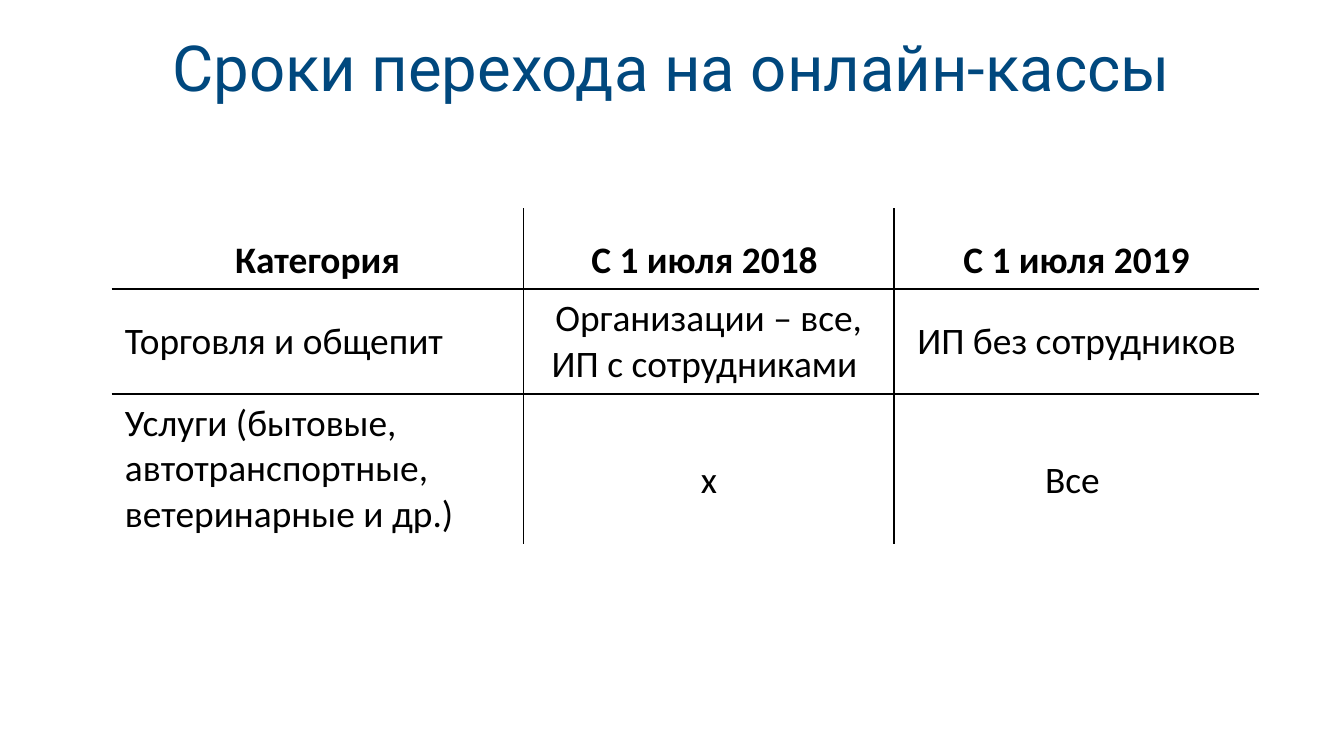
from dataclasses import dataclass

from lxml.etree import SubElement
from pptx import Presentation
from pptx.dml.color import RGBColor
from pptx.enum.text import MSO_ANCHOR, PP_ALIGN
from pptx.oxml.ns import qn
from pptx.util import Inches, Pt


@dataclass(frozen=True)
class Theme:
    heading: RGBColor = RGBColor(0x00, 0x48, 0x7E)
    ink: RGBColor = RGBColor(0, 0, 0)
    paper: RGBColor = RGBColor(0xFF, 0xFF, 0xFF)
    heading_font: str = "Roboto"
    body_font: str = "Calibri"
    heading_size: int = 34
    body_size: int = 20
    heading_leading: int = 35
    rule_width: int = 1


THEME = Theme()
SLIDE_WIDTH = 10
COLUMN_WIDTHS = (3.07, 2.76, 2.72)
ROW_HEIGHTS = (0.6, 0.78, 1.12)
DEADLINES = (
    ("Категория", "С 1 июля 2018 ", "С 1 июля 2019"),
    ("Торговля и общепит", "Организации – все,\nИП с сотрудниками ", "ИП без сотрудников"),
    ("Услуги (бытовые, автотранспортные, ветеринарные и др.)", "x", "Все "),
)
SINGLE_SPACED = {(1, 1), (2, 0)}


def style_font(font, name, size, color, bold=False):
    font.name = name
    font.size = Pt(size)
    font.color.rgb = color
    font.bold = bold


def add_heading(slide, left, top, width, height):
    heading = slide.shapes.add_textbox(Inches(left), Inches(top), Inches(width), Inches(height))
    frame = heading.text_frame
    frame.word_wrap = True
    frame.vertical_anchor = MSO_ANCHOR.MIDDLE
    frame.margin_left = frame.margin_right = frame.margin_top = frame.margin_bottom = 0
    frame.text = "Сроки перехода на онлайн-кассы"
    paragraph = frame.paragraphs[0]
    paragraph.alignment = PP_ALIGN.CENTER
    paragraph.line_spacing = Pt(THEME.heading_leading)
    style_font(paragraph.runs[0].font, THEME.heading_font, THEME.heading_size, THEME.heading)


def set_borders(cell, visible_sides):
    properties = cell._tc.get_or_add_tcPr()
    for index, side in enumerate("LRTB"):
        border = SubElement(properties, qn(f"a:ln{side}"), w=str(Pt(THEME.rule_width)))
        properties.insert(index, border)
        if side in visible_sides:
            fill = SubElement(border, qn("a:solidFill"))
            SubElement(fill, qn("a:srgbClr"), val=str(THEME.ink))
        else:
            SubElement(border, qn("a:noFill"))


def fill_cell(cell, row, column, text):
    is_header, is_category = row == 0, column == 0
    last_row, last_column = len(ROW_HEIGHTS) - 1, len(COLUMN_WIDTHS) - 1
    centred_vertically = is_header or (row == last_row and not is_category)
    cell.vertical_anchor = MSO_ANCHOR.MIDDLE if centred_vertically else MSO_ANCHOR.TOP
    if is_header or is_category:
        cell.fill.background()
    else:
        cell.fill.solid()
        cell.fill.fore_color.rgb = THEME.paper
    inner_edges = {"L": column > 0, "R": column < last_column, "T": row > 0, "B": row < last_row}
    set_borders(cell, [side for side, visible in inner_edges.items() if visible])

    cell.text_frame.text = text
    for paragraph in cell.text_frame.paragraphs:
        paragraph.alignment = PP_ALIGN.LEFT if is_category and not is_header else PP_ALIGN.CENTER
        paragraph.line_spacing = 1.0 if (row, column) in SINGLE_SPACED else 1.5
        style_font(paragraph.runs[0].font, THEME.body_font, THEME.body_size, THEME.ink, is_header)


def add_deadlines(slide, left, top, width, height):
    deadlines = slide.shapes.add_table(
        len(ROW_HEIGHTS), len(COLUMN_WIDTHS),
        Inches(left), Inches(top), Inches(width), Inches(height),
    ).table
    deadlines.first_row = False
    deadlines.horz_banding = False
    for column, share in zip(deadlines.columns, COLUMN_WIDTHS):
        column.width = Inches(width * share / sum(COLUMN_WIDTHS))
    for row, share in zip(deadlines.rows, ROW_HEIGHTS):
        row.height = Inches(height * share / sum(ROW_HEIGHTS))
    for row, texts in enumerate(DEADLINES):
        for column, text in enumerate(texts):
            fill_cell(deadlines.cell(row, column), row, column, text)


def main():
    presentation = Presentation()
    presentation.slide_width = Inches(SLIDE_WIDTH)
    presentation.slide_height = Inches(SLIDE_WIDTH * 9 / 16)
    slide = presentation.slides.add_slide(presentation.slide_layouts[6])
    add_heading(slide, 0.31, 0.14, 9.37, 0.79)
    add_deadlines(slide, 0.83, 1.55, 8.54, 2.5)
    presentation.save("out.pptx")


if __name__ == "__main__":
    main()
